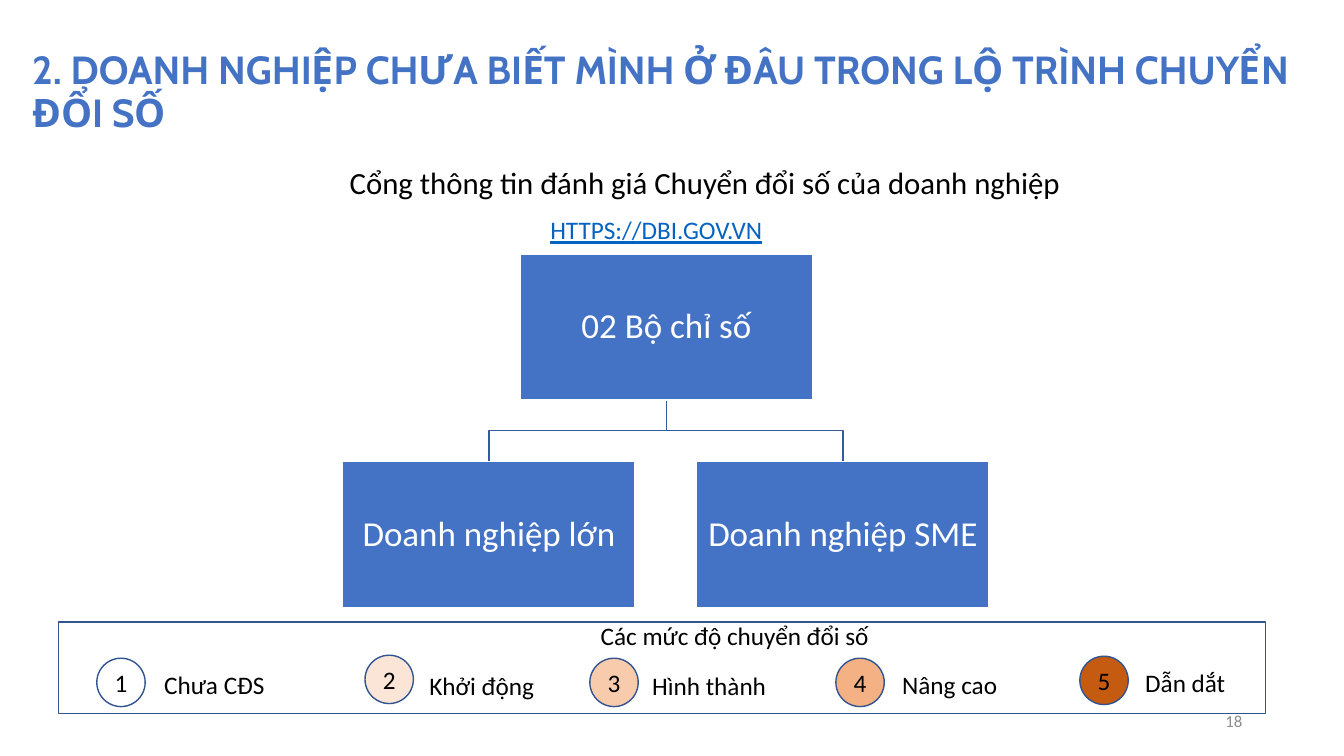
from pptx import Presentation
from pptx.dml.color import RGBColor
from pptx.enum.shapes import MSO_SHAPE
from pptx.enum.text import MSO_ANCHOR, MSO_AUTO_SIZE, PP_ALIGN
from pptx.util import Emu, Pt

PX = 9144  # 100 px to the inch
BLUE, NAVY, LINK = "4472C4", "325491", "0563C1"
BLACK, WHITE, GREY = "000000", "FFFFFF", "8C8C8C"
NODE_WIDTH, NODE_HEIGHT = 290, 145
CIRCLE = 48

# Number, fill, circle left and top, label, label left, top and width
LEVELS = [
    ("1", None, 96, 653, "Chưa CĐS", 153, 659, 121),
    ("2", "FBE5D6", 362, 650, "Khởi động", 416, 660, 125),
    ("3", "F8CBAD", 585, 653, "Hình thành", 637, 660, 135),
    ("4", "F4B183", 829, 653, "Nâng cao", 885, 659, 116),
    ("5", "C55A11", 1071, 651, "Dẫn dắt", 1126, 657, 101),
]


def px(*lengths):
    return [Emu(length * PX) for length in lengths]


def color(value):
    return RGBColor.from_string(value)


def write(frame, text, size, ink, align=PP_ALIGN.LEFT, font="Calibri"):
    para = frame.paragraphs[0]
    para.add_run().text = text
    para.alignment = align
    para.font.name = font
    para.font.size = Pt(size)
    para.font.color.rgb = color(ink)
    return para


def paint(shape, fill, line):
    shape.shadow.inherit = False
    if fill:
        shape.fill.solid()
        shape.fill.fore_color.rgb = color(fill)
    else:
        shape.fill.background()
    shape.line.color.rgb = color(line)
    shape.line.width = Pt(1)


def add_figure(page, kind, left, top, width, height, fill, line):
    figure = page.shapes.add_shape(kind, *px(left, top, width, height))
    paint(figure, fill, line)
    figure.text_frame.vertical_anchor = MSO_ANCHOR.MIDDLE
    return figure


def add_label(page, text, left, top, width, size=18, ink=BLACK, height=40):
    """One unwrapped line of text."""
    box = page.shapes.add_textbox(*px(left, top, width, height))
    box.text_frame.word_wrap = False
    box.text_frame.auto_size = MSO_AUTO_SIZE.SHAPE_TO_FIT_TEXT
    return write(box.text_frame, text, size, ink)


def add_block(page, text, left, top, width, height, size, ink, **style):
    """Wrapped text, centred vertically in a fixed area."""
    box = page.shapes.add_textbox(*px(left, top, width, height))
    box.text_frame.word_wrap = True
    box.text_frame.vertical_anchor = MSO_ANCHOR.MIDDLE
    return write(box.text_frame, text, size, ink, **style)


def add_node(page, text, left, top):
    node = add_figure(page, MSO_SHAPE.RECTANGLE, left, top,
                      NODE_WIDTH, NODE_HEIGHT, BLUE, WHITE)
    frame = node.text_frame
    frame.margin_left, frame.margin_top = px(2, 2)
    frame.margin_right, frame.margin_bottom = px(2, 2)
    write(frame, text, 25, WHITE, PP_ALIGN.CENTER).line_spacing = 0.9


def add_branch(page, parent, child):
    """Bent line from the parent's bottom to the child's top."""
    start_x, end_x = (left + NODE_WIDTH // 2 for left in (parent[0], child[0]))
    start_y, end_y = parent[1] + NODE_HEIGHT, child[1]
    middle_y = (start_y + end_y) // 2
    builder = page.shapes.build_freeform(start_x, start_y, scale=PX)
    builder.add_line_segments(
        [(start_x, middle_y), (end_x, middle_y), (end_x, end_y)], close=False)
    paint(builder.convert_to_shape(), None, "365B9D")


def add_level(page, number, fill, left, top, label, label_left, label_top, width):
    circle = add_figure(page, MSO_SHAPE.OVAL, left, top, CIRCLE, CIRCLE, fill, NAVY)
    write(circle.text_frame, number, 18, BLACK, PP_ALIGN.CENTER)
    add_label(page, label, label_left, label_top, width)


def main():
    deck = Presentation()
    deck.slide_width, deck.slide_height = px(1333, 750)
    page = deck.slides.add_slide(deck.slide_layouts[6])

    # Title and portal address
    title = add_block(
        page, "2. DOANH NGHIỆP CHƯA BIẾT MÌNH Ở ĐÂU TRONG LỘ TRÌNH CHUYỂN ĐỔI SỐ",
        22, 20, 1311, 145, 28, BLUE, font="Cabin")
    title.font.bold = True
    title.line_spacing = 0.9
    add_label(page, "Cổng thông tin đánh giá Chuyển đổi số của doanh nghiệp",
              337, 158, 729, size=22, height=47)
    address = add_label(page, "HTTPS://DBI.GOV.VN", 536, 208, 233, ink=LINK)
    address.font.underline = True

    # Index tree
    root = (516, 252)
    children = [("Doanh nghiệp lớn", (340, 458)), ("Doanh nghiệp SME", (691, 458))]
    for text, corner in children:
        add_branch(page, root, corner)
    add_node(page, "02 Bộ chỉ số", *root)
    for text, corner in children:
        add_node(page, text, *corner)

    # Scale of levels
    add_figure(page, MSO_SHAPE.RECTANGLE, 58, 617, 1197, 91, None, NAVY)
    add_label(page, "Các mức độ chuyển đổi số", 586, 610, 289)
    for level in LEVELS:
        add_level(page, *level)

    # Page number
    add_block(page, "18", 942, 695, 300, 40, 12, GREY, align=PP_ALIGN.RIGHT)

    deck.save("out.pptx")


if __name__ == "__main__":
    main()
